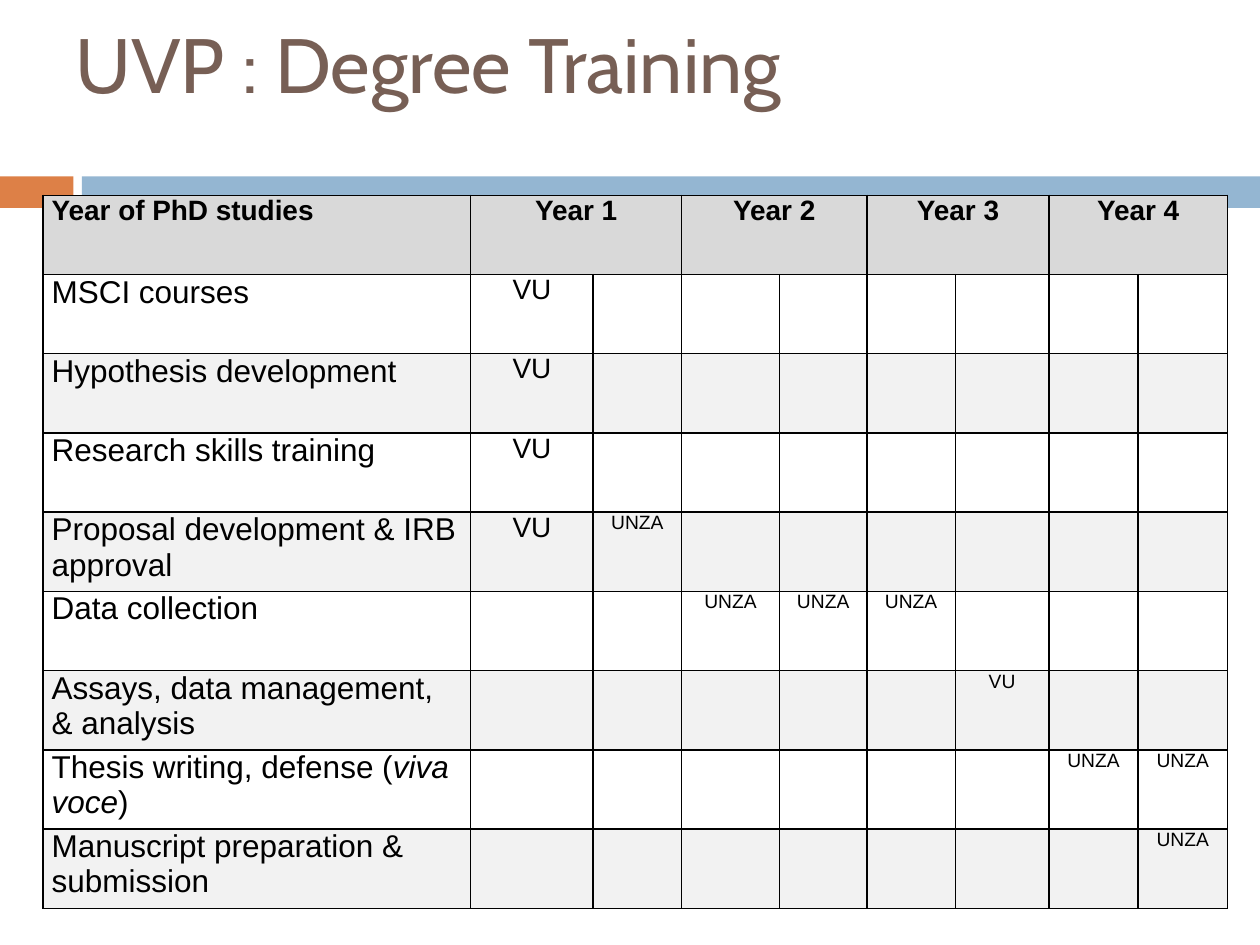
"""Builds the UVP degree training slide with its four-year PhD schedule."""
from lxml.etree import SubElement
from pptx import Presentation
from pptx.dml.color import RGBColor
from pptx.enum.shapes import MSO_SHAPE as SHAPE
from pptx.enum.text import MSO_ANCHOR as ANCHOR, PP_ALIGN as ALIGN
from pptx.oxml.ns import qn
from pptx.util import Pt


def rgb(value):
    return RGBColor.from_string(value)


def add_borders(cell, color="000000", width=1):
    pr = cell._tc.get_or_add_tcPr()
    for side in ("lnL", "lnR", "lnT", "lnB"):
        ln = SubElement(pr, qn(f"a:{side}"), w=str(Pt(width)))
        SubElement(SubElement(ln, qn("a:solidFill")), qn("a:srgbClr"), val=color)


prs = Presentation()
prs.slide_width, prs.slide_height = Pt(720), Pt(540)
s = prs.slides.add_slide(prs.slide_layouts[6])

for left, width, color in ((0, 42, "DD8047"), (46.8, 673.2, "94B6D2")):
    sp = s.shapes.add_shape(SHAPE.RECTANGLE, Pt(left), Pt(100.8), Pt(width), Pt(18))
    sp.shadow.inherit = False
    sp.fill.solid()
    sp.fill.fore_color.rgb = rgb(color)
    sp.line.fill.background()

title = s.shapes.add_textbox(Pt(36), Pt(0), Pt(648), Pt(72))
tf = title.text_frame
tf.word_wrap = True
tf.vertical_anchor = ANCHOR.MIDDLE
p = tf.paragraphs[0]
p.text = "UVP : Degree Training"
p.font.name, p.font.size = "Cabin", Pt(44)
p.font.color.rgb = rgb("775F55")

header = {0: "Year of PhD studies", 1: "Year 1", 3: "Year 2", 5: "Year 3", 7: "Year 4"}
activities = [
    {0: "MSCI courses", 1: "VU"},
    {0: "Hypothesis development", 1: "VU"},
    {0: "Research skills training", 1: "VU"},
    {0: "Proposal development & IRB approval", 1: "VU", 2: "UNZA"},
    {0: "Data collection", 3: "UNZA", 4: "UNZA", 5: "UNZA"},
    {0: "Assays, data management, & analysis", 6: "VU"},
    {0: "Thesis writing, defense (*viva voce*)", 7: "UNZA", 8: "UNZA"},
    {0: "Manuscript preparation & submission", 8: "UNZA"},
]
rows = [header] + activities
col_widths = [244.5, 70, 50.5, 56, 50, 50.5, 53.5, 51, 51]
row_height = 45.28

table = s.shapes.add_table(len(rows), len(col_widths), Pt(24.5), Pt(111.6),
                           Pt(sum(col_widths)), Pt(row_height * len(rows))).table
for col, width in zip(table.columns, col_widths):
    col.width = Pt(width)
for row in table.rows:
    row.height = Pt(row_height)

for i, texts in enumerate(rows):
    for j in range(len(col_widths)):
        cell = table.cell(i, j)
        add_borders(cell)
        if i % 2 and i > 0:
            cell.fill.background()
        else:
            cell.fill.solid()
            cell.fill.fore_color.rgb = rgb("F2F2F2" if i else "D9D9D9")
        cell.margin_left = cell.margin_right = Pt(5)
        cell.margin_top = cell.margin_bottom = Pt(0)
        if j not in texts:
            continue
        p = cell.text_frame.paragraphs[0]
        p.alignment = ALIGN.CENTER if j else ALIGN.LEFT
        p.font.name = "Arial"
        p.font.size = Pt(16 if i == 0 or j == 1 else 11 if j else 18)
        p.font.bold = i == 0
        p.font.color.rgb = rgb("000000")
        for k, part in enumerate(texts[j].split("*")):
            r = p.add_run()
            r.text = part
            if k % 2:
                r.font.italic = True

for j in range(1, len(col_widths), 2):
    table.cell(0, j).merge(table.cell(0, j + 1))

prs.save("out.pptx")
